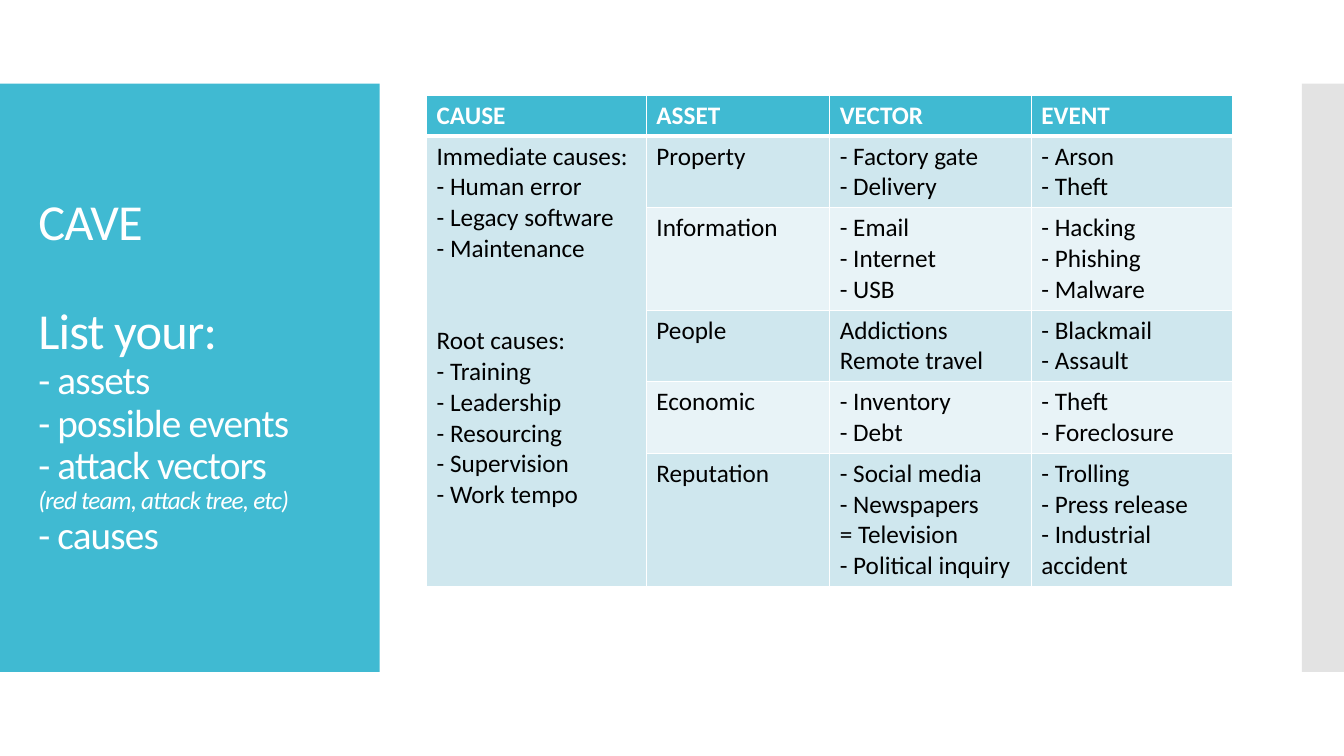
import pptx
import pptx.util
import pptx.dml.color
import pptx.enum.shapes
import pptx.enum.text
import pptx.oxml
import pptx.oxml.ns
from pptx.util import Cm

THEME = {
    "font": "Calibri",
    "accent": "40BAD2",
    "edge": "C8C8C8",
    "bands": ("CFE7EE", "E8F3F7"),
    "light": "FFFFFF",
    "dark": "000000",
    "heading": 36,
    "item": 28,
    "body": 18,
}

TITLE_LINES = [
    ("CAVE", "heading", False, 0),
    ("List your:", "heading", False, 39),
    ("- assets", "item", False, 0),
    ("- possible events", "item", False, 0),
    ("- attack vectors", "item", False, 0),
    ("(red team, attack tree, etc)", "body", True, 0),
    ("- causes", "item", False, 0),
]

HEADERS = ["CAUSE", "ASSET", "VECTOR", "EVENT"]
COLUMN_WIDTHS = [5.54, 4.62, 5.08, 5.08]
CAUSES = [
    "Immediate causes:", "- Human error", "- Legacy software", "- Maintenance",
    "Root causes:", "- Training", "- Leadership", "- Resourcing",
    "- Supervision", "- Work tempo",
]
CAUSE_GAPS = {"Root causes:": 44}
RISKS = [
    (["Property"], ["- Factory gate", "- Delivery"], ["- Arson", "- Theft"]),
    (["Information"], ["- Email", "- Internet", "- USB"],
     ["- Hacking", "- Phishing", "- Malware"]),
    (["People"], ["Addictions", "Remote travel"], ["- Blackmail", "- Assault"]),
    (["Economic"], ["- Inventory", "- Debt"], ["- Theft", "- Foreclosure"]),
    (["Reputation"],
     ["- Social media", "- Newspapers", "= Television", "- Political inquiry"],
     ["- Trolling", "- Press release", "- Industrial accident"]),
]

BAND_TOP, BAND_HEIGHT = 2.11, 14.82
SIDE_BARS = [(0, 9.57, "accent", 100), (32.81, 1.06, "edge", 50)]
LINE_HEIGHT, CELL_PADDING = 0.77, 0.25


def rgb(color):
    return pptx.dml.color.RGBColor.from_string(color)


def add_run(paragraph, wording, size, color, bold=False, italic=False):
    run = paragraph.add_run()
    run.text = wording
    run.font.name = THEME["font"]
    run.font.size = pptx.util.Pt(THEME[size])
    run.font.color.rgb = rgb(color)
    run.font.bold = bold
    run.font.italic = italic
    return run


def paragraph_at(frame, index):
    return frame.paragraphs[0] if index == 0 else frame.add_paragraph()


def add_side_bar(slide, left, width, color, opacity):
    bar = slide.shapes.add_shape(
        pptx.enum.shapes.MSO_SHAPE.RECTANGLE,
        Cm(left), Cm(BAND_TOP), Cm(width), Cm(BAND_HEIGHT))
    bar.shadow.inherit = False
    bar.line.fill.background()
    bar.fill.solid()
    bar.fill.fore_color.rgb = rgb(THEME[color])
    if opacity < 100:
        tint = bar.element.spPr.find(".//" + pptx.oxml.ns.qn("a:srgbClr"))
        tint.append(pptx.oxml.parse_xml(
            f'<a:alpha {pptx.oxml.ns.nsdecls("a")} val="{opacity * 1000}"/>'))


def fill_title(title):
    title.left, title.top = Cm(0.71), Cm(3.12)
    title.width, title.height = Cm(8.18), Cm(12.78)
    frame = title.text_frame
    frame.word_wrap = True
    frame.auto_size = pptx.enum.text.MSO_AUTO_SIZE.NONE
    frame.vertical_anchor = pptx.enum.text.MSO_ANCHOR.MIDDLE
    for index, (wording, size, italic, gap) in enumerate(TITLE_LINES):
        line = paragraph_at(frame, index)
        line.alignment = pptx.enum.text.PP_ALIGN.LEFT
        line.line_spacing = 0.9
        line.space_before = pptx.util.Pt(gap)
        run = add_run(line, wording, size, THEME["light"], italic=italic)
        run.font._element.set("spc", "-60")


def style_cell(cell, fill, bottom=1):
    cell.fill.solid()
    cell.fill.fore_color.rgb = rgb(fill)
    properties = cell._tc.get_or_add_tcPr()
    for index, (side, width) in enumerate(
            [("L", 1), ("R", 1), ("T", 1), ("B", bottom)]):
        properties.insert(index, pptx.oxml.parse_xml(
            f'<a:ln{side} {pptx.oxml.ns.nsdecls("a")} w="{width * 12700}">'
            f'<a:solidFill><a:srgbClr val="{THEME["light"]}"/></a:solidFill>'
            f'</a:ln{side}>'))


def fill_cell(cell, wordings, color, bold=False):
    for index, wording in enumerate(wordings):
        line = paragraph_at(cell.text_frame, index)
        line.space_before = pptx.util.Pt(CAUSE_GAPS.get(wording, 0))
        add_run(line, wording, "body", color, bold=bold)


def add_risk_table(slide):
    line_counts = [1] + [max(map(len, risk)) for risk in RISKS]
    heights = [count * LINE_HEIGHT + CELL_PADDING for count in line_counts]
    table = slide.shapes.add_table(
        len(heights), len(HEADERS), Cm(10.75), Cm(2.4),
        Cm(sum(COLUMN_WIDTHS)), Cm(sum(heights))).table
    for column, width in zip(table.columns, COLUMN_WIDTHS):
        column.width = Cm(width)
    for row, height in zip(table.rows, heights):
        row.height = Cm(height)

    for column, header in enumerate(HEADERS):
        style_cell(table.cell(0, column), THEME["accent"], bottom=3)
        fill_cell(table.cell(0, column), [header], THEME["light"], bold=True)
    for row, risk in enumerate(RISKS, 1):
        band = THEME["bands"][(row - 1) % 2]
        style_cell(table.cell(row, 0), THEME["bands"][0])
        for column, wordings in enumerate(risk, 1):
            style_cell(table.cell(row, column), band)
            fill_cell(table.cell(row, column), wordings, THEME["dark"])
    table.cell(1, 0).merge(table.cell(len(RISKS), 0))
    fill_cell(table.cell(1, 0), CAUSES, THEME["dark"])


def main():
    deck = pptx.Presentation()
    deck.slide_width, deck.slide_height = Cm(33.87), Cm(19.05)
    slide = deck.slides.add_slide(deck.slide_layouts[5])
    for bar in SIDE_BARS:
        add_side_bar(slide, *bar)
    title = slide.shapes.title
    title.element.getparent().append(title.element)
    fill_title(title)
    add_risk_table(slide)
    deck.save("out.pptx")


if __name__ == "__main__":
    main()
